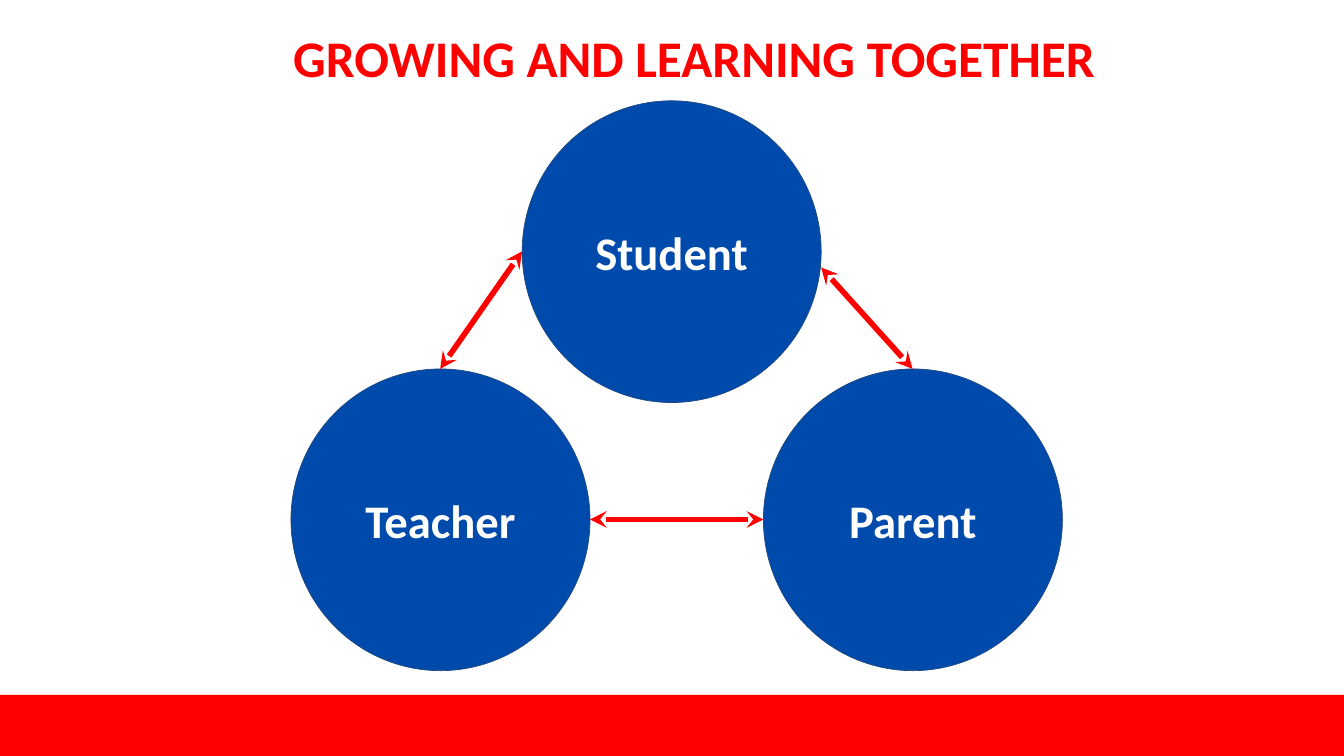
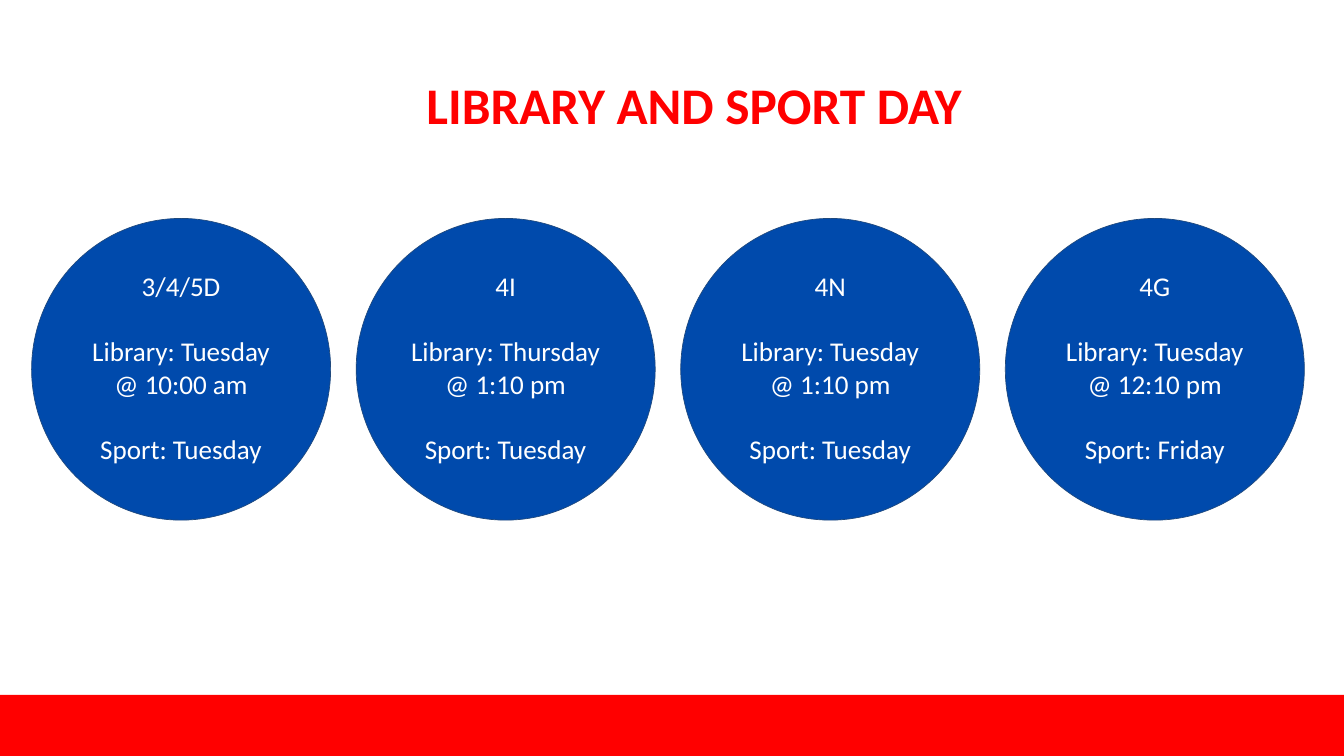
import pptx
import pptx.util
import pptx.dml.color
import pptx.enum.shapes
import pptx.enum.text
import pptx.oxml
import pptx.oxml.ns

SHAPE = pptx.enum.shapes.MSO_SHAPE
ANCHOR = pptx.enum.text.MSO_ANCHOR
RED, BLUE, NAVY, WHITE = "FF0000", "004AAC", "1F497D", "FFFFFF"
FONT = "Calibri"
WIDE, HIGH = 2000, 1125
DISC_W, DISC_H = 445, 449


def px(n):
    """Turn px, a hundred to the inch, into EMU."""
    return pptx.util.Emu(n * 9144)


def tint(code):
    """Turn a hex string into a colour."""
    return pptx.dml.color.RGBColor.from_string(code)


class Deck:
    """Hold the style and the current slide."""

    def __init__(self):
        """Open an empty wide deck."""
        self.file = pptx.Presentation()
        self.file.slide_width, self.file.slide_height = px(WIDE), px(HIGH)

    def page(self, title, top):
        """Start a slide with its title and red band."""
        self.slide = self.file.slides.add_slide(self.file.slide_layouts[6])
        box = self.slide.shapes.add_textbox(*map(px, (125, top, 1816, 94)))
        self.text(box, [title], 55, RED, True, (0, 1, 0, 0), ANCHOR.TOP)
        self.shape(SHAPE.RECTANGLE, 0, 1034, WIDE, HIGH - 1034, RED)

    def text(self, shape, lines, size, color, bold, inset, anchor, gap=0):
        """Write centred paragraphs into a shape."""
        frame = shape.text_frame
        frame.word_wrap = True
        frame.vertical_anchor = anchor
        (frame.margin_left, frame.margin_top,
         frame.margin_right, frame.margin_bottom) = map(px, inset)
        for i, line in enumerate(lines):
            para = frame.add_paragraph() if i else frame.paragraphs[0]
            para.alignment = pptx.enum.text.PP_ALIGN.CENTER
            para.space_before = pptx.util.Pt(gap if i else 0)
            run = para.add_run()
            run.text = line
            run.font.name, run.font.size = FONT, pptx.util.Pt(size)
            run.font.bold, run.font.color.rgb = bold, tint(color)

    def shape(self, kind, x, y, w, h, fill, edge=None):
        """Draw a flat filled shape."""
        shape = self.slide.shapes.add_shape(kind, *map(px, (x, y, w, h)))
        shape.shadow.inherit = False
        shape.fill.solid()
        shape.fill.fore_color.rgb = tint(fill)
        if edge:
            shape.line.color.rgb = tint(edge)
            shape.line.width = pptx.util.Pt(0.75)
        else:
            shape.line.fill.background()
        return shape

    def disc(self, x, y, lines, size, bold=False, anchor=ANCHOR.TOP, gap=0):
        """Draw a blue disc with white text."""
        disc = self.shape(SHAPE.OVAL, x, y, DISC_W, DISC_H, BLUE, NAVY)
        self.text(disc, lines, size, WHITE, bold, (10,) * 4, anchor, gap)

    def arrow(self, start, end):
        """Draw a red line with a head at each end."""
        kind = pptx.enum.shapes.MSO_CONNECTOR.STRAIGHT
        line = self.slide.shapes.add_connector(kind, *map(px, start + end))
        line.line.color.rgb = tint(RED)
        line.line.width = pptx.util.Pt(6)
        pen = line.line._get_or_add_ln()
        for tag in ("a:headEnd", "a:tailEnd"):
            tip = pptx.oxml.xmlchemy.OxmlElement(tag)
            tip.set("type", "stealth")
            pen.append(tip)
        flat = pptx.oxml.xmlchemy.OxmlElement("a:effectLst")
        line._element.spPr.append(flat)


def bond(deck):
    """Build the slide on student, teacher and parent."""
    deck.page("GROWING AND LEARNING TOGETHER", 38)
    spots = {"Teacher": (433, 549), "Parent": (1136, 549), "Student": (777, 150)}
    for name, (x, y) in spots.items():
        deck.disc(x, y, [name], 50, True, ANCHOR.MIDDLE)
    (left, low), (right, _), (mid, high) = spots.values()
    half_w, half_h = DISC_W // 2, DISC_H // 2
    deck.arrow((left + half_w, low), (mid, high + half_h))
    deck.arrow((left + DISC_W, low + half_h), (right, low + half_h))
    deck.arrow((right + half_w, low), (mid + DISC_W, high + half_h + 24))


def days(deck):
    """Build the slide of class days."""
    deck.page("LIBRARY AND SPORT DAY", 108)
    plan = [
        ("3/4/5D", "Tuesday @ 10:00 am", "Tuesday"),
        ("4I", "Thursday @ 1:10 pm", "Tuesday"),
        ("4N", "Tuesday @ 1:10 pm", "Tuesday"),
        ("4G", "Tuesday @ 12:10 pm", "Friday"),
    ]
    for i, (group, books, sport) in enumerate(plan):
        lines = [group, f"Library: {books}", f"Sport: {sport}"]
        deck.disc(47 + 483 * i, 325, lines, 29, gap=35)


def main():
    """Build and save the deck."""
    deck = Deck()
    bond(deck)
    days(deck)
    deck.file.save("out.pptx")


if __name__ == "__main__":
    main()
